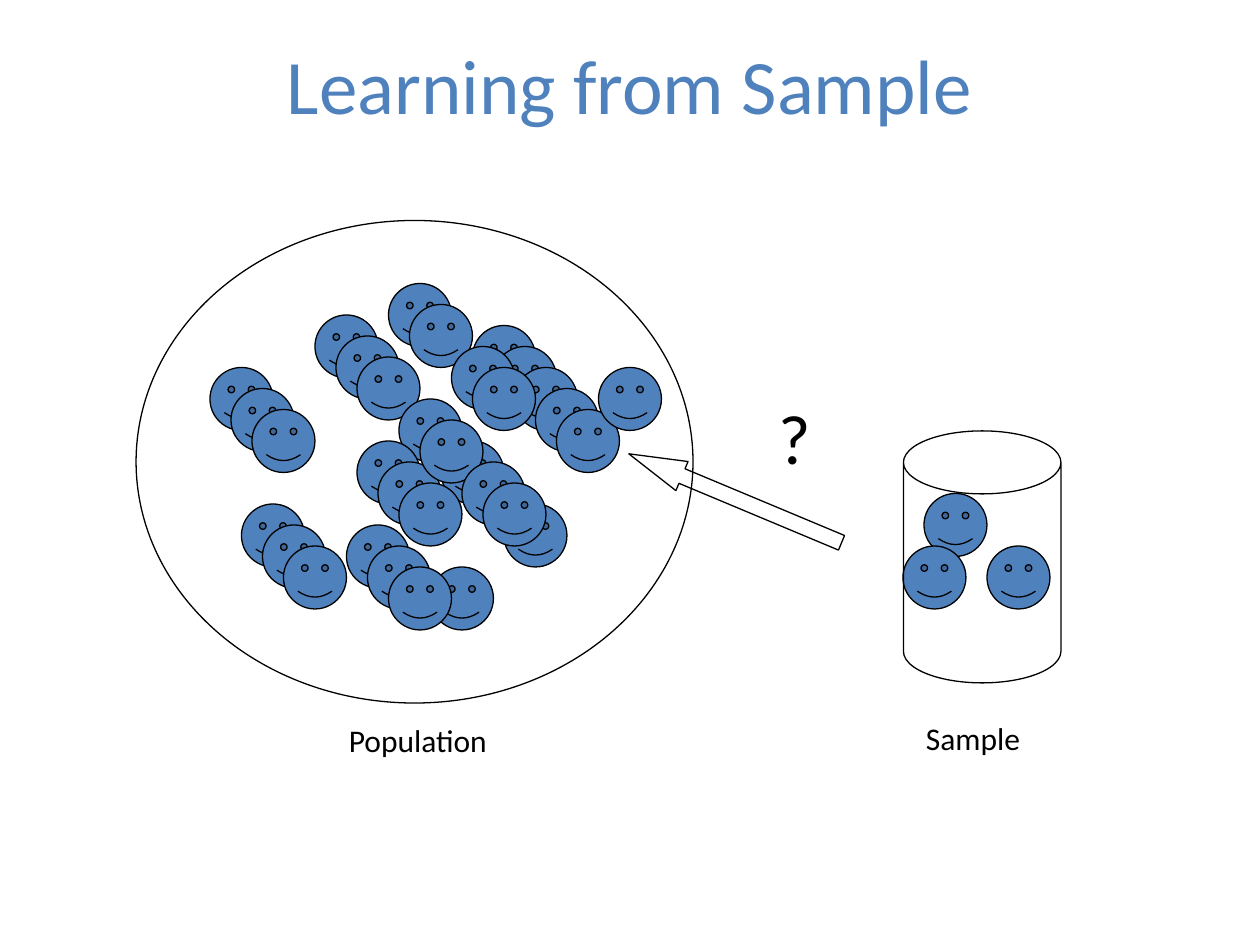
import pptx
import pptx.dml.color
import pptx.enum.shapes
import pptx.enum.text
import pptx.util

Inches = pptx.util.Inches
MSO_SHAPE = pptx.enum.shapes.MSO_SHAPE
BLUE = pptx.dml.color.RGBColor(0x4F, 0x81, 0xBD)
BLACK = pptx.dml.color.RGBColor(0, 0, 0)

FACE_SIZE = 0.5
GRID = 12  # face positions are counted in twelfths of an inch
CHAIN_STEP = 2

# Column, row and length of each diagonal chain of faces, from back to front
POPULATION_CHAINS = [
    (30, 30, 3), (37, 27, 2), (45, 31, 5), (43, 33, 2),
    (48, 48, 1), (41, 54, 1), (23, 48, 3), (20, 35, 3),
    (57, 35, 1), (33, 50, 3), (38, 38, 1), (34, 42, 2),
    (42, 42, 1), (40, 40, 1), (38, 46, 1), (44, 44, 2),
]
SAMPLE_FACES = [(88, 47, 1), (94, 52, 1), (86, 52, 1)]


def add_outlined_shape(kind, left, top, width, height, adjustments=(), fill=None):
    shape = slide.shapes.add_shape(
        kind, Inches(left), Inches(top), Inches(width), Inches(height))
    shape.shadow.inherit = False
    if fill is None:
        shape.fill.background()
    else:
        shape.fill.solid()
        shape.fill.fore_color.rgb = fill
    shape.line.color.rgb = BLACK
    shape.line.width = pptx.util.Pt(0.75)
    for index, value in enumerate(adjustments):
        shape.adjustments[index] = value
    return shape


def write_text(shape, text, size, color=BLACK, align=None, wrap=True,
               auto_size=pptx.enum.text.MSO_AUTO_SIZE.SHAPE_TO_FIT_TEXT):
    frame = shape.text_frame
    frame.word_wrap = wrap
    frame.auto_size = auto_size
    paragraph = frame.paragraphs[0]
    paragraph.alignment = align
    run = paragraph.add_run()
    run.text = text
    run.font.name = "Calibri"
    run.font.size = pptx.util.Pt(size)
    run.font.color.rgb = color


presentation = pptx.Presentation()
presentation.slide_width = Inches(10)
presentation.slide_height = Inches(7.5)
slide = presentation.slides.add_slide(presentation.slide_layouts[5])

title = slide.shapes.title
title.left, title.top = Inches(0), Inches(0)
title.width, title.height = Inches(10), Inches(1.33)
title.text_frame.vertical_anchor = pptx.enum.text.MSO_ANCHOR.MIDDLE
write_text(title, "Learning from Sample", 44, color=BLUE,
           align=pptx.enum.text.PP_ALIGN.CENTER,
           auto_size=pptx.enum.text.MSO_AUTO_SIZE.NONE)

add_outlined_shape(MSO_SHAPE.OVAL, 1.08, 1.75, 4.42, 3.83)

for column, row, count in POPULATION_CHAINS + SAMPLE_FACES:
    for position in range(count):
        offset = position * CHAIN_STEP
        add_outlined_shape(
            MSO_SHAPE.SMILEY_FACE, (column + offset) / GRID, (row + offset) / GRID,
            FACE_SIZE, FACE_SIZE, adjustments=[0.047], fill=BLUE)

arrow = add_outlined_shape(MSO_SHAPE.LEFT_ARROW, 4.92, 3.83, 1.83, 0.25,
                           adjustments=[0.5, 1.83])
arrow.rotation = 22.7

add_outlined_shape(MSO_SHAPE.CAN, 7.17, 3.42, 1.25, 2, adjustments=[0.4])

for text, left, top, width, height, size, wrap in [
    ("Population", 2.67, 5.67, 1.83, 0.4, 18, True),
    ("Sample", 7.25, 5.66, 1.08, 0.4, 18, True),
    ("?", 6.08, 3.08, 0.46, 0.77, 40, False),
]:
    text_box = slide.shapes.add_textbox(
        Inches(left), Inches(top), Inches(width), Inches(height))
    write_text(text_box, text, size, wrap=wrap)

presentation.save("out.pptx")
